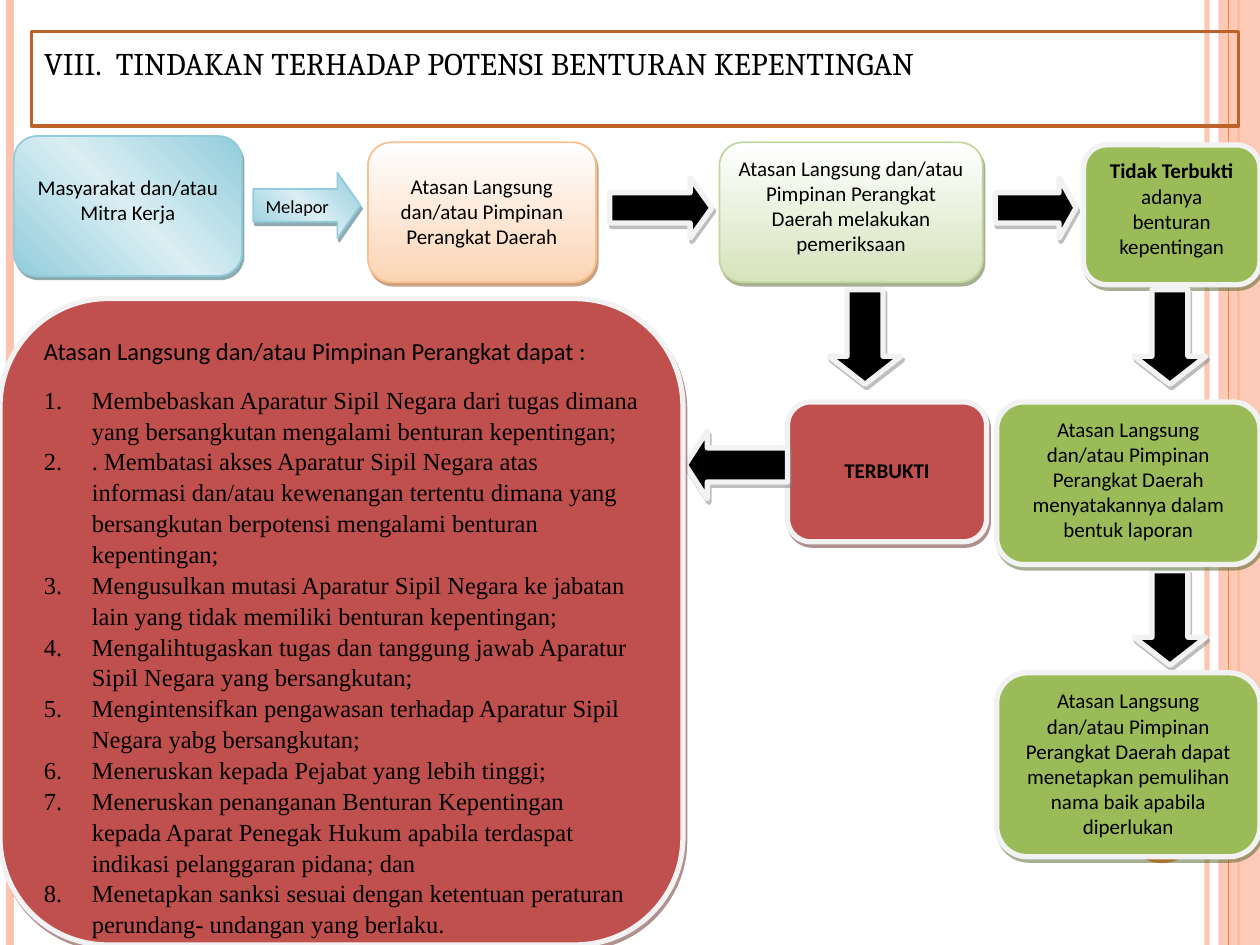
from lxml import etree
from pptx import Presentation
from pptx.dml.color import RGBColor
from pptx.enum.shapes import MSO_CONNECTOR, MSO_SHAPE
from pptx.enum.text import MSO_ANCHOR, PP_ALIGN
from pptx.oxml.ns import qn
from pptx.util import Inches, Pt

BLACK = RGBColor(0x00, 0x00, 0x00)
WHITE = RGBColor(0xFF, 0xFF, 0xFF)
PALE = RGBColor(0xF2, 0xF2, 0xF2)
PINK = RGBColor(0xFE, 0xC3, 0xAE)
ORANGE = RGBColor(0xFE, 0x86, 0x37)
RUST = RGBColor(0xBC, 0x63, 0x29)
RED = RGBColor(0xC0, 0x50, 0x4D)
GREEN = RGBColor(0x9B, 0xBB, 0x59)
AQUA = RGBColor(0x92, 0xCD, 0xDC)
AQUA_LIGHT = RGBColor(0xDA, 0xEE, 0xF3)
PEACH = RGBColor(0xFB, 0xD4, 0xB4)
PEACH_EDGE = RGBColor(0xFA, 0xBF, 0x8F)
LIME = RGBColor(0xD6, 0xE3, 0xBC)
LIME_EDGE = RGBColor(0xC2, 0xD6, 0x9B)
AQUA_SHADE = RGBColor(0x20, 0x58, 0x67)
PEACH_SHADE = RGBColor(0x97, 0x47, 0x06)
GREEN_SHADE = RGBColor(0x4E, 0x61, 0x28)
RED_SHADE = RGBColor(0x62, 0x24, 0x23)
GREY_SHADE = RGBColor(0x7F, 0x7F, 0x7F)

AQUA_BLEND = (315, AQUA, AQUA_LIGHT, AQUA)
SUPERIOR = "Atasan Langsung dan/atau Pimpinan Perangkat Daerah"
MEASURES = [
    "Membebaskan Aparatur Sipil Negara dari tugas dimana yang bersangkutan mengalami benturan kepentingan;",
    ". Membatasi akses Aparatur Sipil Negara atas informasi dan/atau kewenangan tertentu dimana yang "
    "bersangkutan berpotensi mengalami benturan kepentingan;",
    "Mengusulkan mutasi Aparatur Sipil Negara ke jabatan lain yang tidak memiliki benturan kepentingan;",
    "Mengalihtugaskan tugas dan tanggung jawab Aparatur Sipil Negara yang bersangkutan;",
    "Mengintensifkan pengawasan terhadap Aparatur Sipil Negara yabg bersangkutan;",
    "Meneruskan kepada Pejabat yang lebih tinggi;",
    "Meneruskan penanganan Benturan Kepentingan kepada Aparat Penegak Hukum apabila terdaspat indikasi "
    "pelanggaran pidana; dan",
    "Menetapkan sanksi sesuai dengan ketentuan peraturan perundang- undangan yang berlaku.",
]


def write(paragraph, text, *, size=12, font="Calibri", bold=False, align=PP_ALIGN.CENTER, after=0, spacing=None):
    """Add a formatted run to a paragraph."""
    paragraph.alignment = align
    paragraph.space_before = Pt(0)
    paragraph.space_after = Pt(after)
    paragraph.line_spacing = spacing
    run = paragraph.add_run()
    run.text = text
    run.font.size, run.font.name, run.font.bold = Pt(size), font, bold
    run.font.color.rgb = BLACK


def number(paragraph, scheme, indent, start=1):
    """Give a paragraph automatic numbering with a hanging indent."""
    properties = paragraph._p.get_or_add_pPr()
    properties.set("marL", str(Inches(indent)))
    properties.set("indent", str(-Inches(indent)))
    numbering = etree.SubElement(properties, qn("a:buAutoNum"), type=scheme)
    if start > 1:
        numbering.set("startAt", str(start))


def set_alpha(element, percent):
    """Make the colour inside an element partly transparent."""
    colour = next(element.iter(qn("a:srgbClr")))
    etree.SubElement(colour, qn("a:alpha"), val=str(percent * 1000))


def blend(shape, angle, *colours):
    """Fill a shape with evenly spaced gradient stops."""
    shape.fill.gradient()
    gradient = shape.element.spPr.find(qn("a:gradFill"))
    stops = gradient.find(qn("a:gsLst"))
    stops.clear()
    for index, colour in enumerate(colours):
        stop = etree.SubElement(stops, qn("a:gs"), pos=str(100000 * index // (len(colours) - 1)))
        etree.SubElement(stop, qn("a:srgbClr"), val=str(colour))
    gradient.find(qn("a:lin")).set("ang", str(angle * 60000))


def cast_shadow(shape, colour):
    """Add a hard, half-transparent shadow to a shape."""
    effects = shape.element.spPr.find(qn("a:effectLst"))
    shadow = etree.SubElement(effects, qn("a:outerShdw"), dist=str(Pt(2.2)), dir=str(63 * 60000),
                              algn="ctr", rotWithShape="0")
    etree.SubElement(shadow, qn("a:srgbClr"), val=str(colour))
    set_alpha(shadow, 50)


def add_figure(slide, kind, place, fill, *, edge=None, width=3, shade=None):
    """Add a preset shape with its fill, outline and shadow."""
    figure = slide.shapes.add_shape(kind, *map(Inches, place))
    figure.shadow.inherit = False
    if isinstance(fill, tuple) and not isinstance(fill, RGBColor):
        blend(figure, *fill)
    else:
        figure.fill.solid()
        figure.fill.fore_color.rgb = fill
    if edge is None:
        figure.line.fill.background()
    else:
        figure.line.color.rgb = edge
        figure.line.width = Pt(width)
    if shade is not None:
        cast_shadow(figure, shade)
    return figure


def add_step(slide, place, fill, shade, *, edge=PALE, width=3, top=0.05):
    """Add a rounded box and return its first paragraph."""
    step = add_figure(slide, MSO_SHAPE.ROUNDED_RECTANGLE, place, fill, edge=edge, width=width, shade=shade)
    step.text_frame.word_wrap = True
    step.text_frame.vertical_anchor = MSO_ANCHOR.TOP
    step.text_frame.margin_top = Inches(top)
    return step.text_frame.paragraphs[0]


def add_arrow(slide, place, head, *, rotation=0, fill=BLACK, edge=PALE, width=3, shade=GREY_SHADE):
    """Add a block arrow with its head length."""
    arrow = add_figure(slide, MSO_SHAPE.RIGHT_ARROW, place, fill, edge=edge, width=width, shade=shade)
    arrow.adjustments[1] = head
    arrow.rotation = rotation
    return arrow


def add_stripe(slide, x, colour, width, alpha=100):
    """Add a vertical line over the full height."""
    stripe = slide.shapes.add_connector(MSO_CONNECTOR.STRAIGHT, Inches(x), 0, Inches(x), Inches(7.5))
    stripe.line.color.rgb = colour
    stripe.line.width = Pt(width)
    set_alpha(stripe.element.spPr, alpha)
    etree.SubElement(stripe.element.spPr, qn("a:effectLst"))


def add_backdrop(slide):
    """Draw the stripes, the side band and the disc."""
    add_stripe(slide, 9.58, PINK, 3, 93)
    add_stripe(slide, 0.08, PINK, 4.5)
    add_stripe(slide, 9.83, ORANGE, 1.5)
    band = add_figure(slide, MSO_SHAPE.RECTANGLE, (9.67, 0, 0.33, 7.5), PINK)
    set_alpha(band.element.spPr, 87)
    add_stripe(slide, 9.75, ORANGE, 0.75)
    add_figure(slide, MSO_SHAPE.OVAL, (8.92, 6.25, 0.6, 0.6), ORANGE)


def add_heading(slide):
    """Format the title placeholder and bring it to the front."""
    heading = slide.shapes.title
    heading.left, heading.top, heading.width, heading.height = map(Inches, (0.25, 0.25, 9.58, 0.75))
    heading.line.color.rgb = RUST
    heading.line.width = Pt(2)
    frame = heading.text_frame
    frame.word_wrap = True
    frame.vertical_anchor = MSO_ANCHOR.TOP
    frame.margin_top = Inches(0.1)
    write(frame.paragraphs[0], "TINDAKAN TERHADAP POTENSI BENTURAN KEPENTINGAN",
          size=18, font="Cambria", align=PP_ALIGN.LEFT)
    number(frame.paragraphs[0], "romanUcPeriod", 0.57, 8)
    slide.shapes.element.append(heading.element)


def add_flow(slide):
    """Draw the reporting steps and the arrows between them."""
    write(add_step(slide, (0.11, 1.08, 1.81, 1.11), AQUA_BLEND, AQUA_SHADE, edge=AQUA, width=1, top=0.25),
          "Masyarakat dan/atau Mitra Kerja")
    write(add_step(slide, (2.92, 1.13, 1.81, 1.11), (90, WHITE, PEACH), PEACH_SHADE,
                   edge=PEACH_EDGE, width=1, top=0.19), SUPERIOR)
    report = add_arrow(slide, (2.01, 1.37, 0.85, 0.52), 0.35, fill=AQUA_BLEND, edge=AQUA, width=1, shade=AQUA_SHADE)
    report.text_frame.vertical_anchor = MSO_ANCHOR.TOP
    write(report.text_frame.paragraphs[0], "Melapor", size=10.5, align=PP_ALIGN.LEFT)
    write(add_step(slide, (5.71, 1.13, 2.09, 1.11), (90, WHITE, LIME), GREEN_SHADE, edge=LIME_EDGE, width=1),
          f"{SUPERIOR} melakukan pemeriksaan")
    add_arrow(slide, (4.84, 1.41, 0.81, 0.48), 0.36)
    write(add_step(slide, (6.25, 3.19, 1.58, 1.11), RED, RED_SHADE, top=0.39), "TERBUKTI", bold=True)
    unproven = add_step(slide, (8.6, 1.15, 1.4, 1.11), GREEN, GREEN_SHADE)
    write(unproven, "Tidak Terbukti", bold=True)
    write(unproven, " adanya benturan kepentingan")
    add_arrow(slide, (7.9, 1.41, 0.64, 0.48), 0.28)
    for left, top in ((6.49, 2.39), (8.91, 2.39), (8.91, 4.62)):
        add_arrow(slide, (left, top, 0.75, 0.57), 0.39, rotation=90)
    for top, height, outcome in ((3.19, 1.29, "menyatakannya dalam bentuk laporan"),
                                 (5.34, 1.46, "dapat menetapkan pemulihan nama baik apabila diperlukan")):
        write(add_step(slide, (7.91, top, 2.09, height), GREEN, GREEN_SHADE), f"{SUPERIOR} {outcome}")
    add_arrow(slide, (5.44, 3.42, 0.81, 0.54), 0.32, rotation=180)


def add_measures(slide):
    """Draw the panel with the numbered measures."""
    intro = add_step(slide, (0, 2.37, 5.42, 5.13), RED, RED_SHADE)
    write(intro, "Atasan Langsung dan/atau Pimpinan Perangkat dapat :", size=14, align=PP_ALIGN.LEFT, after=10)
    frame = slide.shapes[-1].text_frame
    for index, measure in enumerate(MEASURES):
        item = frame.add_paragraph()
        write(item, measure, size=14, font="Times New Roman", spacing=1.05,
              align=PP_ALIGN.LEFT if index else PP_ALIGN.JUSTIFY)
        number(item, "arabicPeriod", 0.38)


def main():
    """Build and save the slide."""
    deck = Presentation()
    deck.slide_width, deck.slide_height = Inches(10), Inches(7.5)
    slide = deck.slides.add_slide(deck.slide_layouts[5])
    add_backdrop(slide)
    add_flow(slide)
    add_measures(slide)
    add_heading(slide)
    deck.save("out.pptx")


if __name__ == "__main__":
    main()
